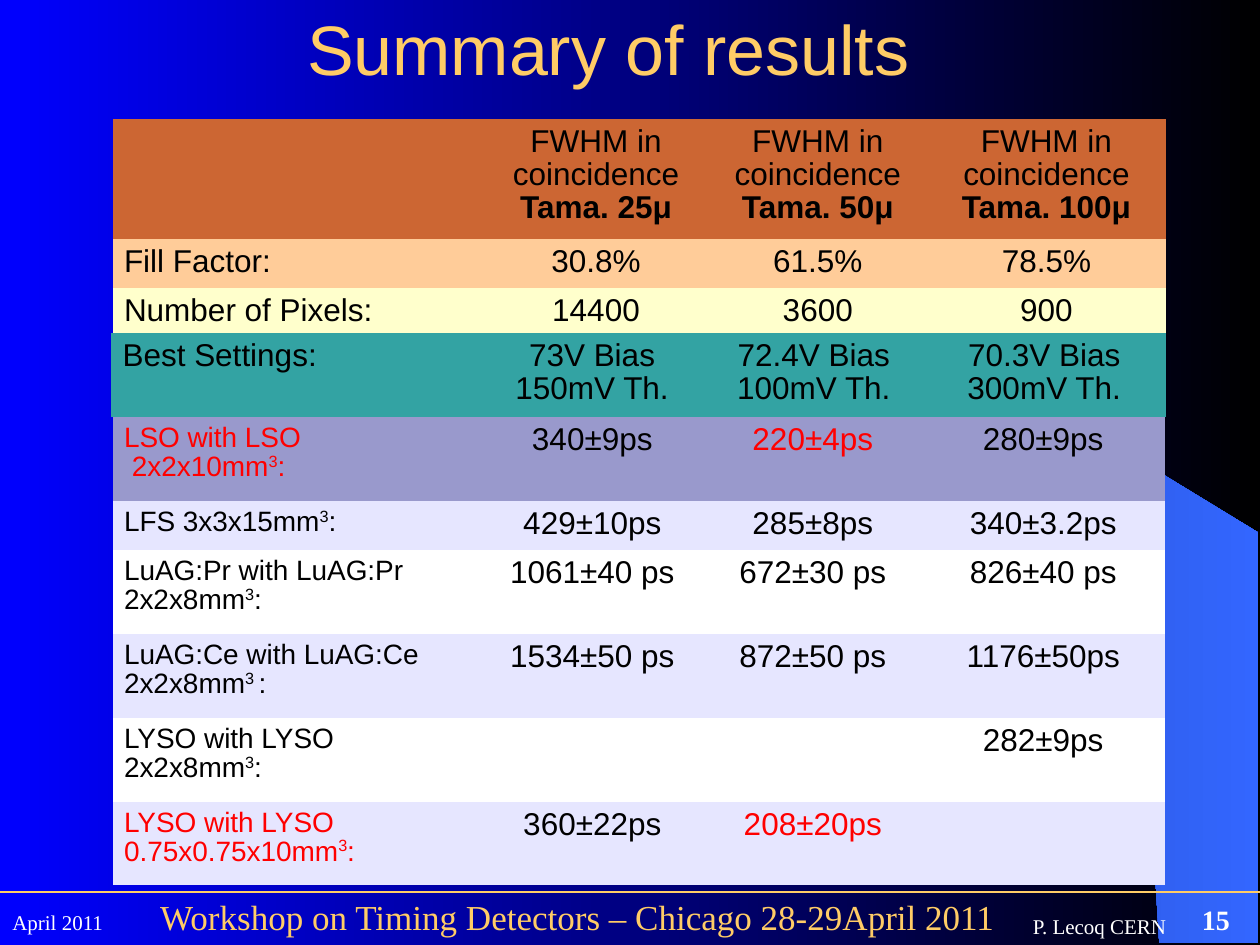
import lxml.etree
import pptx
import pptx.dml.color
import pptx.enum.shapes
import pptx.enum.text
import pptx.oxml.ns
import pptx.util

Cm = pptx.util.Cm
Pt = pptx.util.Pt
ALIGN = pptx.enum.text.PP_ALIGN
GOLD, WHITE, BLACK, RED = "FFCC66", "FFFFFF", "000000", "FF0000"
SERIF, SANS = "Times New Roman", "Arial"
PLAIN = "{2D5ABB26-0587-4C30-8999-92F81FD0307C}"
LILAC = "E6E6FF"

WEDGE = [
    (23.37, 19), (25.37, 19.02), (25.37, 10.74), (14.96, 4.39), (15.85, 5.05),
    (16.59, 5.64), (17.4, 6.35), (18.19, 7.11), (19.35, 8.38), (20.4, 9.75),
    (21.13, 10.95), (21.79, 12.17), (22.3, 13.41), (22.68, 14.53),
    (22.94, 15.47), (23.19, 16.66), (23.29, 17.68),
]

# Cells: "!" marks red text, "^" encloses superscripts, "|" parts paragraphs.
HEAD = [
    ("CC6633", 2.41, [""] + [f"FWHM in coincidence|Tama. {size}μ" for size in (25, 50, 100)]),
    ("FFCC99", 1, ["Fill Factor:", "30.8%", "61.5%", "78.5%"]),
    ("FFFFCC", 1, ["Number of Pixels:", "14400", "3600", "900"]),
]
BEST = [
    ("33A3A3", 1.7, ["Best Settings:", "73V Bias|150mV Th.",
                     "72.4V Bias|100mV Th.", "70.3V Bias|300mV Th."]),
]
TIMES = [
    ("9999CC", 1.69, ["!LSO with LSO|2x2x10mm^3^:", "340±9ps", "!220±4ps", "280±9ps"]),
    (LILAC, 0.99, ["LFS 3x3x15mm^3^:", "429±10ps", "285±8ps", "340±3.2ps"]),
    (WHITE, 1.69, ["LuAG:Pr with LuAG:Pr 2x2x8mm^3^:", "1061±40 ps", "672±30 ps", "826±40 ps"]),
    (LILAC, 1.69, ["LuAG:Ce with LuAG:Ce 2x2x8mm^3 ^:", "1534±50 ps", "872±50 ps", "1176±50ps"]),
    (WHITE, 1.69, ["LYSO with LYSO|2x2x8mm^3^:", "", "", "282±9ps"]),
    (LILAC, 1.69, ["!LYSO with LYSO|0.75x0.75x10mm^3^:", "360±22ps", "!208±20ps", ""]),
]


def rgb(code):
    """Turn a hex string into a colour."""
    return pptx.dml.color.RGBColor.from_string(code)


def style(font, size, code, face, bold=False):
    """Set the look of a font."""
    font.size, font.name, font.bold = Pt(size), face, bold
    font.color.rgb = rgb(code)


def blend(fill, first, last):
    """Fill with a gradient from left to right."""
    fill.gradient()
    fill.gradient_angle = 0
    for stop, code, spot in zip(fill.gradient_stops, (first, last), (0, 1)):
        stop.color.rgb = rgb(code)
        stop.position = spot


def wedge(slide):
    """Draw the curved blue wedge on the right."""
    points = [(Cm(x), Cm(y)) for x, y in WEDGE]
    pen = slide.shapes.build_freeform(*points[0])
    pen.add_line_segments(points[1:], close=True)
    shape = pen.convert_to_shape()
    shape.shadow.inherit = False
    blend(shape.fill, "2449B6", "3366FF")
    shape.line.fill.background()


def label(slide, text, box, size, code=WHITE, bold=False, wide=False):
    """Add one line of footer text."""
    frame = slide.shapes.add_textbox(*map(Cm, box)).text_frame
    frame.word_wrap = wide
    frame.text = text
    para = frame.paragraphs[0]
    para.alignment = ALIGN.CENTER if wide else ALIGN.LEFT
    style(para.runs[0].font, size, code, SERIF, bold)


def rule(slide):
    """Draw the thin line above the footer."""
    kind = pptx.enum.shapes.MSO_CONNECTOR.STRAIGHT
    line = slide.shapes.add_connector(kind, 0, Cm(17.98), Cm(25.4), Cm(17.98))
    line.line.color.rgb = rgb(GOLD)
    line.line.width = Pt(0.75)
    lxml.etree.SubElement(line._element.spPr, pptx.oxml.ns.qn("a:effectLst"))


def write(cell, text, size, align):
    """Fill a cell with marked-up paragraphs."""
    code = RED if text.startswith("!") else BLACK
    frame = cell.text_frame
    for i, part in enumerate(text.lstrip("!").split("|")):
        para = frame.add_paragraph() if i else frame.paragraphs[0]
        para.alignment, para.line_spacing = align, 0.93
        if part.startswith("2x2x10"):
            para._p.get_or_add_pPr().set("marL", str(Cm(0.16)))
        for j, piece in enumerate(part.split("^")):
            if piece:
                run = para.add_run()
                run.text = piece
                style(run.font, size, code, SANS, part.startswith("Tama"))
                if j % 2:
                    run.font._element.set("baseline", "33000")


def grid(slide, left, top, widths, rows, size=18):
    """Add a table whose first column holds labels."""
    high = sum(row[1] for row in rows)
    box = map(Cm, (left, top, sum(widths), high))
    table = slide.shapes.add_table(len(rows), len(widths), *box).table
    table._tbl.tblPr[0].text = PLAIN
    table.first_row = table.horz_banding = False
    for col, width in zip(table.columns, widths):
        col.width = Cm(width)
    for row, (code, height, texts) in zip(table.rows, rows):
        row.height = Cm(height)
        for i, (cell, text) in enumerate(zip(row.cells, texts)):
            cell.fill.solid()
            cell.fill.fore_color.rgb = rgb(code)
            cell.margin_left = cell.margin_right = Cm(0.23)
            cell.margin_top, cell.margin_bottom = Cm(0.15), Cm(0.13)
            write(cell, text, 18 if i else size, ALIGN.CENTER if i else ALIGN.LEFT)


def title(slide, text):
    """Place and format the slide title."""
    shape = slide.shapes.title
    shape.left, shape.top, shape.width, shape.height = map(Cm, (3.18, 0, 18.16, 2.34))
    frame = shape.text_frame
    frame.text = text
    frame.vertical_anchor = pptx.enum.text.MSO_ANCHOR.MIDDLE
    para = frame.paragraphs[0]
    para.alignment, para.line_spacing = ALIGN.CENTER, Pt(36)
    style(para.runs[0].font, 40, GOLD, SANS)


def main():
    """Build the slide and save it."""
    deck = pptx.Presentation()
    deck.slide_width, deck.slide_height = Cm(25.4), Cm(19.05)
    slide = deck.slides.add_slide(deck.slide_layouts[5])
    blend(slide.background.fill, "0000FF", BLACK)
    title(slide, "Summary of results")
    wedge(slide)
    label(slide, "P. Lecoq CERN", (20.57, 18.29, 3.35, 0.76), 12)
    label(slide, "April 2011", (0, 18.21, 2.39, 0.76), 12)
    label(slide, "15", (23.98, 18.06, 1.17, 0.94), 16, bold=True)
    label(slide, "Workshop on Timing Detectors – Chicago 28-29April 2011",
          (1.38, 17.93, 20.52, 1.12), 20, GOLD, wide=True)
    rule(slide)
    grid(slide, 2.27, 2.4, (7.47, 4.55, 4.39, 4.83), HEAD)
    grid(slide, 2.24, 6.71, (7.42, 4.55, 4.39, 4.9), BEST)
    grid(slide, 2.27, 8.41, (7.42, 4.5, 4.39, 4.9), TIMES, 16)
    deck.save("out.pptx")


if __name__ == "__main__":
    main()
